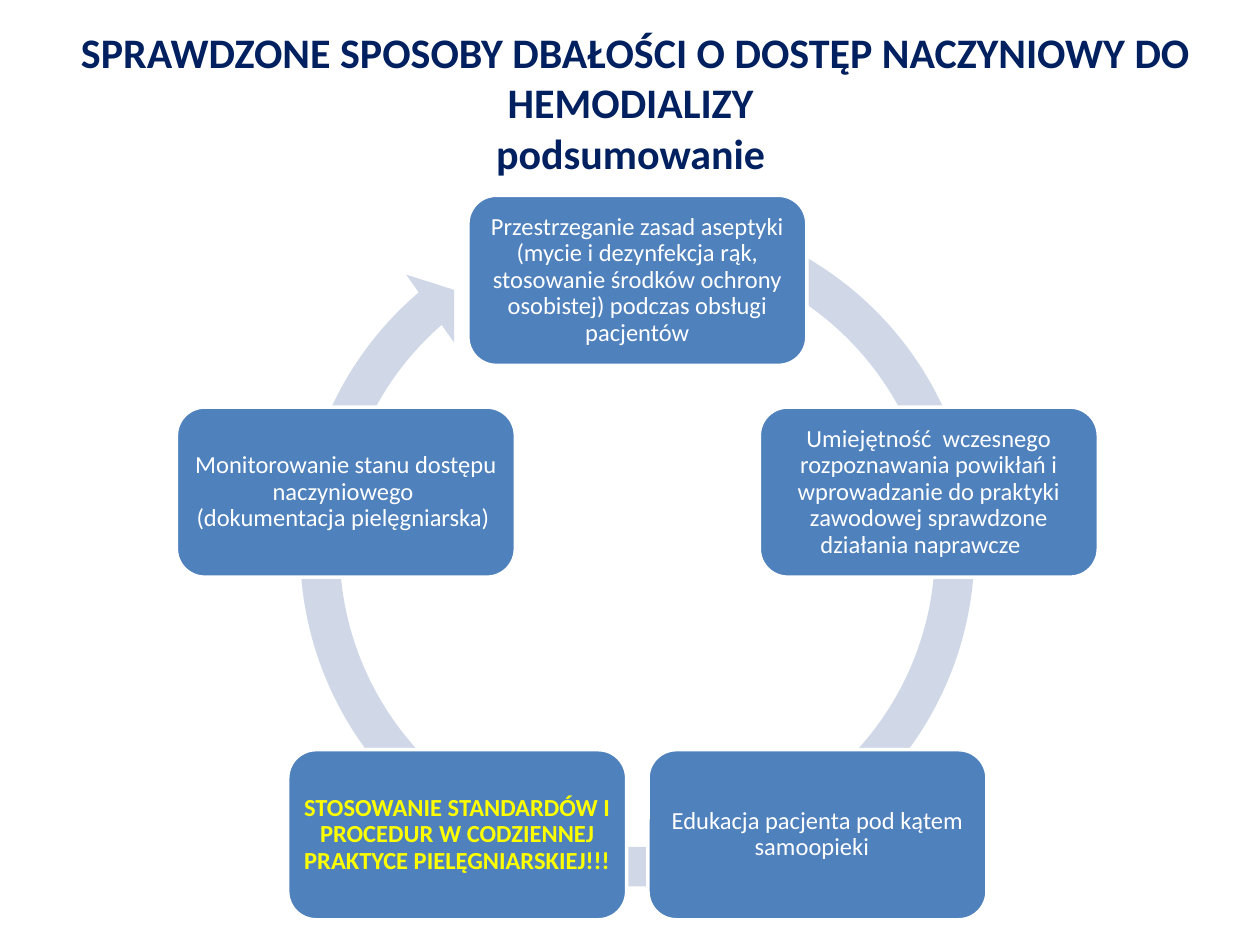
from math import cos, radians, sin

from pptx import Presentation
from pptx.dml.color import RGBColor
from pptx.enum.shapes import MSO_SHAPE as Shape
from pptx.enum.text import MSO_ANCHOR as Anchor, MSO_AUTO_SIZE as AutoSize, PP_ALIGN as Align
from pptx.util import Pt

NAVY = RGBColor(0x00, 0x20, 0x60)
BLUE = RGBColor(0x4F, 0x81, 0xBD)
PALE_BLUE = RGBColor(0xD0, 0xD8, 0xE8)
WHITE = RGBColor(0xFF, 0xFF, 0xFF)
YELLOW = RGBColor(0xFF, 0xFF, 0x00)
FONT = "Calibri"

TITLE = " SPRAWDZONE SPOSOBY DBAŁOŚCI O DOSTĘP NACZYNIOWY DO HEMODIALIZY\npodsumowanie"
# Clockwise from the top: text, colour, bold
STEPS = [
    ("Przestrzeganie zasad aseptyki (mycie i dezynfekcja rąk, stosowanie środków "
     "ochrony osobistej) podczas obsługi pacjentów", WHITE, False),
    ("Umiejętność  wczesnego rozpoznawania powikłań i wprowadzanie do praktyki "
     "zawodowej sprawdzone działania naprawcze   ", WHITE, False),
    ("Edukacja pacjenta pod kątem samoopieki  ", WHITE, False),
    ("STOSOWANIE STANDARDÓW I PROCEDUR W CODZIENNEJ PRAKTYCE PIELĘGNIARSKIEJ!!! ",
     YELLOW, True),
    ("Monitorowanie stanu dostępu naczyniowego \v(dokumentacja pielęgniarska) ",
     WHITE, False),
]
STEP_WIDTH, STEP_HEIGHT = 193.7, 97.2
RING_SIZE = 410.4
RING_ADJUSTMENTS = (0.055, 3.307, 137.568, 173.976, 0.058)


def format_text(frame, size, color, bold):
    for paragraph in frame.paragraphs:
        paragraph.alignment = Align.CENTER
        for run in paragraph.runs:
            run.font.name = FONT
            run.font.size = Pt(size)
            run.font.bold = bold
            run.font.color.rgb = color


def place_title(slide, left, top, width, height):
    title = slide.shapes.title
    title.left, title.top, title.width, title.height = map(Pt, (left, top, width, height))
    frame = title.text_frame
    frame.text = TITLE
    frame.word_wrap = True
    frame.auto_size = AutoSize.NONE
    frame.vertical_anchor = Anchor.TOP
    for paragraph in frame.paragraphs:
        paragraph.line_spacing = 1.0
        paragraph.space_before = Pt(0)
    format_text(frame, 24, NAVY, True)


def add_filled(slide, kind, left, top, width, height, color):
    shape = slide.shapes.add_shape(kind, Pt(left), Pt(top), Pt(width), Pt(height))
    shape.shadow.inherit = False
    shape.fill.solid()
    shape.fill.fore_color.rgb = color
    return shape


def add_step(slide, left, top, text, color, bold):
    step = add_filled(slide, Shape.ROUNDED_RECTANGLE, left, top, STEP_WIDTH, STEP_HEIGHT, BLUE)
    step.line.color.rgb = WHITE
    step.line.width = Pt(2)
    frame = step.text_frame
    frame.text = text
    frame.word_wrap = True
    frame.vertical_anchor = Anchor.MIDDLE
    frame.margin_left = frame.margin_right = Pt(4.2)
    frame.margin_top = frame.margin_bottom = Pt(4.2)
    frame.paragraphs[0].line_spacing = 0.9
    format_text(frame, 14, color, bold)


def add_cycle(slide, left, top, width, height):
    """Spread the steps evenly on a circle over a circular arrow."""
    center_x = left + width / 2
    radius = (height - STEP_HEIGHT) / (1 + cos(radians(36)))
    center_y = top + STEP_HEIGHT / 2 + radius

    ring = add_filled(slide, Shape.CIRCULAR_ARROW, center_x - RING_SIZE / 2, top - 2.9,
                      RING_SIZE, RING_SIZE, PALE_BLUE)
    ring.line.fill.background()
    for index, value in enumerate(RING_ADJUSTMENTS):
        ring.adjustments[index] = value

    for index, (text, color, bold) in enumerate(STEPS):
        angle = radians(index * 360 / len(STEPS))
        add_step(slide, center_x + radius * sin(angle) - STEP_WIDTH / 2,
                 center_y - radius * cos(angle) - STEP_HEIGHT / 2, text, color, bold)


def main():
    deck = Presentation()
    deck.slide_width, deck.slide_height = Pt(720), Pt(540)
    slide = deck.slides.add_slide(deck.slide_layouts[5])
    add_cycle(slide, 100.8, 111.6, 526.8, 414)
    place_title(slide, 11.5, 11.5, 697.7, 94.3)
    deck.save("out.pptx")


if __name__ == "__main__":
    main()
